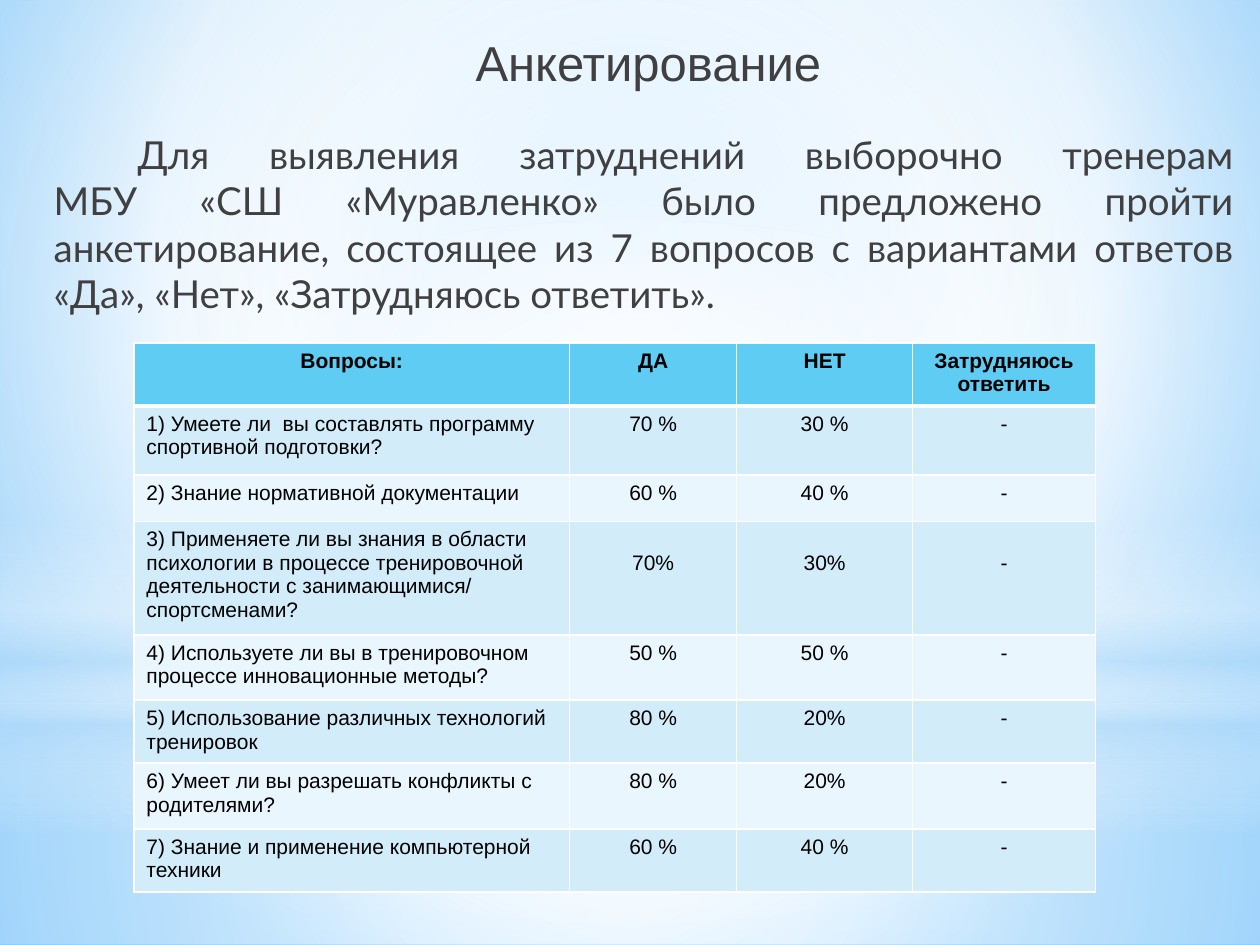
from dataclasses import dataclass
from typing import Optional

import pptx
import pptx.dml.color
import pptx.enum.shapes
import pptx.enum.text
import pptx.oxml
import pptx.oxml.ns
import pptx.util

Pt = pptx.util.Pt
RGBColor = pptx.dml.color.RGBColor
Align = pptx.enum.text.PP_ALIGN
Anchor = pptx.enum.text.MSO_ANCHOR
ShapeType = pptx.enum.shapes.MSO_SHAPE
qn = pptx.oxml.ns.qn

BLACK = RGBColor(0x00, 0x00, 0x00)
WHITE = RGBColor(0xFF, 0xFF, 0xFF)
DARK_GREY = RGBColor(0x40, 0x40, 0x40)
HEADER_BLUE = RGBColor(0x5E, 0xCC, 0xF3)
ROW_BLUE = RGBColor(0xD2, 0xEC, 0xFA)
ROW_PALE = RGBColor(0xEA, 0xF6, 0xFD)
HAZE_BLUE = RGBColor(0xB4, 0xDC, 0xFA)
SKY_BLUE = RGBColor(0x9E, 0xD5, 0xFF)
DEEP_SKY = RGBColor(0x5B, 0xB9, 0xFF)

SLIDE_WIDTH, SLIDE_HEIGHT = 720, 540
TABLE_LEFT, TABLE_TOP = 76.5, 196
COLUMN_WIDTHS = (249, 95.5, 100.5, 104.5)
CELL_MARGIN = 3.6
LINE_HEIGHT = 13.5


@dataclass(frozen=True)
class Stop:
    position: int
    color: RGBColor
    opacity: int = 100


@dataclass(frozen=True)
class Gradient:
    """A circular gradient towards focus (left, top, right, bottom), or a vertical one."""
    stops: tuple[Stop, ...]
    focus: Optional[tuple[int, int, int, int]] = (50, 50, 50, 50)


@dataclass(frozen=True)
class Haze:
    kind: ShapeType
    top: float
    height: float
    gradient: Gradient


@dataclass(frozen=True)
class Row:
    height: float
    cells: tuple[str, str, str, str]
    lowered: bool = False


SKY = Gradient((Stop(0, SKY_BLUE), Stop(60, WHITE), Stop(100, DEEP_SKY)), (20, 10, 20, 60))
HAZES = (
    Haze(ShapeType.RECTANGLE, 402, 138, Gradient(
        (Stop(0, WHITE, 91), Stop(37, WHITE, 76), Stop(100, HAZE_BLUE, 79)))),
    Haze(ShapeType.RECTANGLE, 0, 402, Gradient(
        (Stop(0, WHITE, 89), Stop(48, WHITE, 62), Stop(100, HAZE_BLUE, 79)))),
    Haze(ShapeType.RECTANGLE, 297, 180, Gradient(
        (Stop(0, WHITE, 0), Stop(29, WHITE, 30), Stop(45, HAZE_BLUE, 40),
         Stop(55, WHITE, 26), Stop(65, HAZE_BLUE, 60), Stop(100, WHITE, 0)), None)),
    Haze(ShapeType.OVAL, 126, 402, Gradient((Stop(0, WHITE), Stop(56, WHITE, 0)))),
)

INTRODUCTION = (
    "Для выявления затруднений выборочно тренерам\n"
    "МБУ «СШ «Муравленко» было предложено пройти анкетирование, состоящее из "
    "7 вопросов с вариантами ответов «Да», «Нет», «Затрудняюсь ответить»."
)
ROWS = (
    Row(34.3, ("Вопросы:", "ДА", "НЕТ", "Затрудняюсь ответить")),
    Row(39.5, ("1) Умеете ли  вы составлять программу спортивной подготовки?",
               "70 %", "30 %", "-")),
    Row(26.5, ("2) Знание нормативной документации", "60 %", "40 %", "-")),
    Row(61, ("3) Применяете ли вы знания в области психологии в процессе тренировочной "
             "деятельности с занимающимися/ спортсменами?", "70%", "30%", "-"), lowered=True),
    Row(37.3, ("4) Используете ли вы в тренировочном процессе инновационные методы?",
               "50 %", "50 %", "-")),
    Row(34.3, ("5) Использование различных технологий тренировок", "80 %", "20%", "-")),
    Row(37.5, ("6) Умеет ли вы разрешать конфликты с родителями?", "80 %", "20%", "-")),
    Row(34.3, ("7) Знание и применение компьютерной техники", "60 %", "40 %", "-")),
)


def solid_xml(color: RGBColor, opacity: int = 100) -> str:
    return f'<a:srgbClr val="{color}"><a:alpha val="{opacity * 1000}"/></a:srgbClr>'


def apply_gradient(fill, owner, gradient: Gradient) -> None:
    """Give fill, the first one inside the owner element, the gradient's stops and direction."""
    fill.gradient()
    stops = "".join(f'<a:gs pos="{stop.position * 1000}">{solid_xml(stop.color, stop.opacity)}</a:gs>'
                    for stop in gradient.stops)
    if gradient.focus is None:
        direction = '<a:lin ang="5400000" scaled="0"/>'
    else:
        sides = " ".join(f'{side}="{value * 1000}"' for side, value in zip("ltrb", gradient.focus))
        direction = f'<a:path path="circle"><a:fillToRect {sides}/></a:path>'
    new = pptx.oxml.parse_xml(
        f'<a:gradFill {pptx.oxml.ns.nsdecls("a")} rotWithShape="1">'
        f'<a:gsLst>{stops}</a:gsLst>{direction}</a:gradFill>')
    old = next(owner.iter(qn("a:gradFill")))
    old.getparent().replace(old, new)


def write_text(text_frame, text: str, *, font: str, size: float, color: RGBColor,
               align: Align = Align.LEFT, bold: bool = False):
    paragraph = text_frame.paragraphs[0]
    paragraph.text = text
    paragraph.alignment = align
    for run in paragraph.runs:
        run.font.name = font
        run.font.size = Pt(size)
        run.font.bold = bold
        run.font.color.rgb = color
    return paragraph


def add_haze(slide, haze: Haze) -> None:
    shape = slide.shapes.add_shape(haze.kind, 0, Pt(haze.top), Pt(SLIDE_WIDTH), Pt(haze.height))
    shape.shadow.inherit = False
    shape.line.fill.background()
    apply_gradient(shape.fill, shape.element, haze.gradient)


def place_title(slide, text: str) -> None:
    title = slide.shapes.title
    title.left, title.top, title.width, title.height = Pt(61.5), Pt(15), Pt(618), Pt(96)
    title.text_frame.vertical_anchor = Anchor.TOP
    write_text(title.text_frame, text, font="Arial", size=28, color=DARK_GREY, align=Align.CENTER)
    slide.shapes.element.append(title.element)  # in front of the hazes


def add_introduction(slide) -> None:
    box = slide.shapes.add_textbox(Pt(20), Pt(71.5), Pt(692), Pt(120))
    box.text_frame.word_wrap = True
    paragraph = write_text(box.text_frame, INTRODUCTION, font="Lato", size=22,
                           color=DARK_GREY, align=Align.JUSTIFY)
    paragraph.space_before = Pt(4.4)
    paragraph.space_after = Pt(3)
    properties = paragraph._p.get_or_add_pPr()
    properties.set("marL", str(Pt(3.6)))
    properties.set("indent", str(Pt(48)))


def set_borders(cell, **widths: float) -> None:
    """Draw white borders; the keywords L, R, T and B are widths in points."""
    properties = cell._tc.get_or_add_tcPr()
    for side, width in widths.items():
        properties.append(pptx.oxml.parse_xml(
            f'<a:ln{side} {pptx.oxml.ns.nsdecls("a")} w="{Pt(width)}">'
            f'<a:solidFill>{solid_xml(WHITE)}</a:solidFill></a:ln{side}>'))


def add_survey_table(slide) -> None:
    frame = slide.shapes.add_table(
        len(ROWS), len(COLUMN_WIDTHS), Pt(TABLE_LEFT), Pt(TABLE_TOP),
        Pt(sum(COLUMN_WIDTHS)), Pt(sum(row.height for row in ROWS)))
    table = frame.table
    for column, width in zip(table.columns, COLUMN_WIDTHS):
        column.width = Pt(width)
    for row_index, row in enumerate(ROWS):
        table.rows[row_index].height = Pt(row.height)
        is_header = row_index == 0
        fill = HEADER_BLUE if is_header else (ROW_PALE, ROW_BLUE)[row_index % 2]
        for column_index, text in enumerate(row.cells):
            cell = table.cell(row_index, column_index)
            is_question = column_index == 0 and not is_header
            set_borders(cell, L=1, R=1, T=3 if row_index == 1 else 1, B=3 if is_header else 1)
            cell.fill.solid()
            cell.fill.fore_color.rgb = fill
            if row.lowered and not is_question:
                cell.margin_top = Pt(CELL_MARGIN + LINE_HEIGHT)
            write_text(cell.text_frame, text, font="Arial", size=12, color=BLACK, bold=is_header,
                       align=Align.LEFT if is_question else Align.CENTER)


def main() -> None:
    presentation = pptx.Presentation()
    presentation.slide_width, presentation.slide_height = Pt(SLIDE_WIDTH), Pt(SLIDE_HEIGHT)
    slide = presentation.slides.add_slide(presentation.slide_layouts[5])
    apply_gradient(slide.background.fill, slide.element, SKY)
    for haze in HAZES:
        add_haze(slide, haze)
    place_title(slide, "Анкетирование")
    add_introduction(slide)
    add_survey_table(slide)
    presentation.save("out.pptx")


if __name__ == "__main__":
    main()
